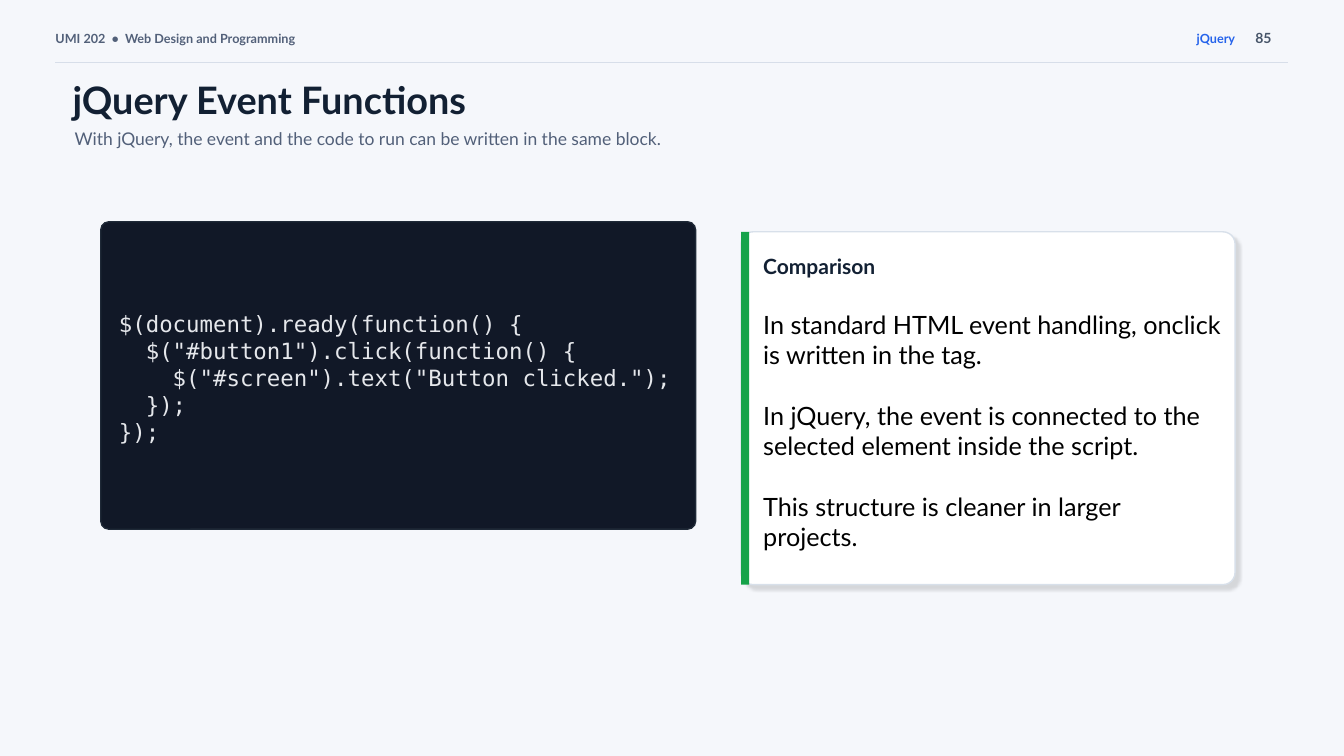
from dataclasses import dataclass

from lxml.etree import SubElement
from pptx import Presentation
from pptx.dml.color import RGBColor
from pptx.enum.shapes import MSO_CONNECTOR, MSO_SHAPE
from pptx.enum.text import MSO_ANCHOR, MSO_AUTO_SIZE, PP_ALIGN
from pptx.oxml.ns import qn
from pptx.util import Pt

EMU_PER_PX = 9144


@dataclass(frozen=True)
class Theme:
    sans: str = "Lato"
    mono: str = "DejaVu Sans Mono"
    background: str = "F5F7FB"
    ink: str = "122033"
    muted: str = "526079"
    accent: str = "2563EB"
    number: str = "475569"
    rule: str = "D7DEE9"
    code_fill: str = "111827"
    code_line: str = "1F2937"
    code_text: str = "E5E7EB"
    card_fill: str = "FFFFFF"
    card_line: str = "D8E0EA"
    card_bar: str = "16A34A"
    black: str = "000000"
    header_size: float = 9
    number_size: float = 10
    title_size: float = 27
    subtitle_size: float = 12.5
    code_size: float = 16
    heading_size: float = 15
    body_size: float = 18


THEME = Theme()

CODE = """$(document).ready(function() {
  $("#button1").click(function() {
    $("#screen").text("Button clicked.");
  });
});"""

COMPARISON = """In standard HTML event handling, onclick is written in the tag.
In jQuery, the event is connected to the selected element inside the script.
This structure is cleaner in larger projects."""


def px(*lengths):
    return [length * EMU_PER_PX for length in lengths]


def color(value):
    return RGBColor.from_string(value)


def write_text(shape, text, *, size, fill, font=THEME.sans, bold=False,
               align=PP_ALIGN.LEFT, gap=0):
    frame = shape.text_frame
    frame.word_wrap = True
    frame.auto_size = MSO_AUTO_SIZE.NONE
    frame.vertical_anchor = MSO_ANCHOR.MIDDLE
    frame.margin_left = frame.margin_top = 0
    frame.margin_right = frame.margin_bottom = 0
    frame.text = text
    for index, paragraph in enumerate(frame.paragraphs):
        paragraph.alignment = align
        if index and gap:
            paragraph.space_before = Pt(gap)
        for run in paragraph.runs:
            run.font.name = font
            run.font.size = Pt(size)
            run.font.bold = bold
            run.font.color.rgb = color(fill)


def add_text(slide, box, text, **text_format):
    write_text(slide.shapes.add_textbox(*px(*box)), text, **text_format)


def set_title(slide, box, text, **text_format):
    title = slide.shapes.title
    title.left, title.top, title.width, title.height = px(*box)
    write_text(title, text, **text_format)


def add_panel(slide, box, fill, line=None, radius=None):
    kind = MSO_SHAPE.RECTANGLE if radius is None else MSO_SHAPE.ROUNDED_RECTANGLE
    panel = slide.shapes.add_shape(kind, *px(*box))
    panel.shadow.inherit = False
    panel.fill.solid()
    panel.fill.fore_color.rgb = color(fill)
    if radius is not None:
        panel.adjustments[0] = radius / min(box[2:])
    if line:
        panel.line.color.rgb = color(line)
        panel.line.width = Pt(1)
    else:
        panel.line.fill.background()
    return panel


def add_soft_shadow(panel):
    effects = panel._element.spPr.find(qn("a:effectLst"))
    shadow = SubElement(effects, qn("a:outerShdw"), blurRad=str(Pt(2)),
                        dist=str(Pt(4)), dir=str(45 * 60000),
                        algn="tl", rotWithShape="0")
    tint = SubElement(shadow, qn("a:srgbClr"), val=THEME.black)
    SubElement(tint, qn("a:alpha"), val="12000")


def add_rule(slide, left, right, y):
    rule = slide.shapes.add_connector(MSO_CONNECTOR.STRAIGHT, *px(left, y, right, y))
    rule.line.color.rgb = color(THEME.rule)
    rule.line.width = Pt(1)
    SubElement(rule._element.spPr, qn("a:effectLst"))


def add_header(slide):
    add_text(slide, (55, 26, 650, 25), "UMI 202  •  Web Design and Programming",
             size=THEME.header_size, fill=THEME.muted, bold=True)
    add_text(slide, (1005, 26, 220, 25), "jQuery", size=THEME.header_size,
             fill=THEME.accent, bold=True, align=PP_ALIGN.RIGHT)
    add_rule(slide, 55, 1277, 62)
    add_text(slide, (1245, 25, 32, 25), "85", size=THEME.number_size,
             fill=THEME.number, bold=True)


def add_code_block(slide):
    add_panel(slide, (100, 220, 590, 305), THEME.code_fill, THEME.code_line, radius=8)
    add_text(slide, (118, 236, 558, 277), CODE, size=THEME.code_size,
             fill=THEME.code_text, font=THEME.mono)


def add_comparison_card(slide):
    left, top, width, height = 735, 230, 490, 350
    card = add_panel(slide, (left, top, width, height), THEME.card_fill,
                     THEME.card_line, radius=12)
    add_soft_shadow(card)
    add_panel(slide, (left, top, 8, height), THEME.card_bar)
    add_text(slide, (left + 22, top + 18, width - 36, 32), "Comparison",
             size=THEME.heading_size, fill=THEME.ink, bold=True)
    add_text(slide, (left + 22, top + 58, width - 36, 278), COMPARISON,
             size=THEME.body_size, fill=THEME.black, gap=THEME.body_size * 1.2)


def main():
    presentation = Presentation()
    presentation.slide_width, presentation.slide_height = px(1333, 750)
    slide = presentation.slides.add_slide(presentation.slide_layouts[5])
    slide.background.fill.solid()
    slide.background.fill.fore_color.rgb = color(THEME.background)

    add_header(slide)
    set_title(slide, (72, 82, 740, 34), "jQuery Event Functions",
              size=THEME.title_size, fill=THEME.ink, bold=True)
    add_text(slide, (74, 128, 880, 18),
             "With jQuery, the event and the code to run can be written in the same block.",
             size=THEME.subtitle_size, fill=THEME.muted)
    add_code_block(slide)
    add_comparison_card(slide)
    presentation.save("out.pptx")


if __name__ == "__main__":
    main()
